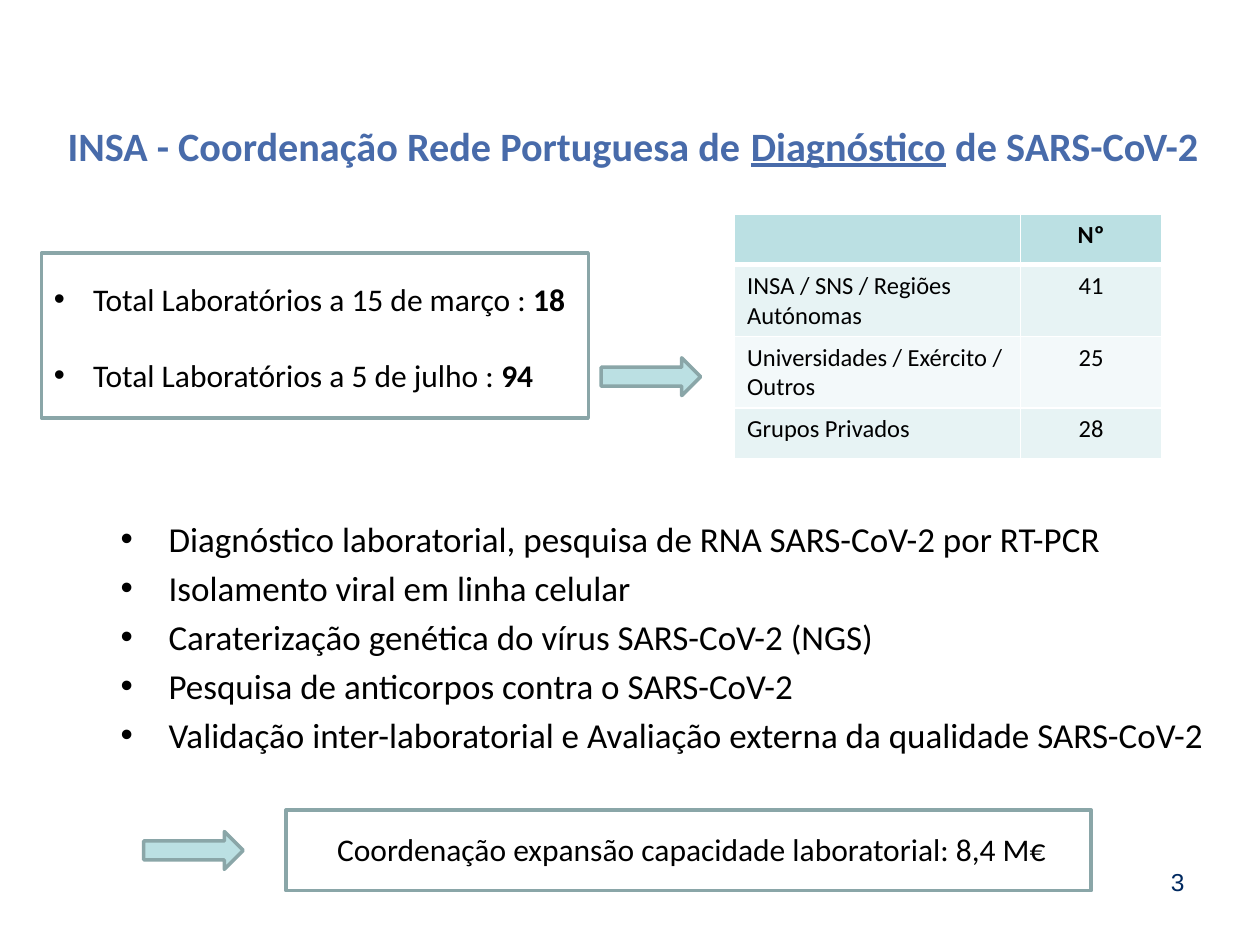
from dataclasses import dataclass

from lxml import etree
from pptx import Presentation
from pptx import util as u
from pptx.dml.color import RGBColor
from pptx.enum import shapes, text
from pptx.oxml import ns

BLACK = RGBColor(0, 0, 0)
WHITE = RGBColor(0xFF, 0xFF, 0xFF)
BLUE = RGBColor(0x48, 0x6B, 0xAA)
NAVY = RGBColor(0x00, 0x29, 0x60)
AQUA = RGBColor(0xBB, 0xE0, 0xE3)
GREY = RGBColor(0x8A, 0xA6, 0xA8)
BANDS = (RGBColor(0xE7, 0xF3, 0xF4), RGBColor(0xF3, 0xF9, 0xFA))
LEFT, MID, RIGHT = text.PP_ALIGN.LEFT, text.PP_ALIGN.CENTER, text.PP_ALIGN.RIGHT


@dataclass
class Run:
    words: str
    bold: bool = False
    under: bool = False


@dataclass
class Box:
    left: float
    top: float
    width: float
    height: float

    def rect(self) -> tuple:
        return tuple(map(u.Inches, (self.left, self.top, self.width, self.height)))


@dataclass
class Label:
    box: Box
    lines: list[list[Run]]
    size: float
    color: RGBColor = BLACK
    align: text.PP_ALIGN = LEFT
    font: str = "Calibri"
    indent: float = 0
    gap: float = 0


def style(run, size: float, color: RGBColor, bold: bool, face: str = "Calibri") -> None:
    font = run.font
    font.size, font.name, font.bold = u.Pt(size), face, bold
    font.color.rgb = color


def bullet(para, indent: float) -> None:
    props = para._p.get_or_add_pPr()
    inset = u.Inches(indent)
    props.set("marL", str(inset))
    props.set("indent", str(-inset))
    font = etree.SubElement(props, ns.qn("a:buFont"))
    font.set("typeface", "Arial")
    mark = etree.SubElement(props, ns.qn("a:buChar"))
    mark.set("char", "•")


def draw_label(slide, label: Label) -> None:
    frame = slide.shapes.add_textbox(*label.box.rect()).text_frame
    frame.word_wrap = True
    for i, line in enumerate(label.lines):
        para = frame.add_paragraph() if i else frame.paragraphs[0]
        if label.indent:
            bullet(para, label.indent)
        para.alignment = label.align
        if i:
            para.space_before = u.Pt(label.gap)
        for part in line:
            run = para.add_run()
            run.text = part.words
            style(run, label.size, label.color, part.bold, label.font)
            if part.under:
                run.font.underline = True


def draw_shape(slide, kind: shapes.MSO_SHAPE, box: Box, fill: RGBColor | None = None) -> None:
    shape = slide.shapes.add_shape(kind, *box.rect())
    shape.shadow.inherit = False
    if fill is None:
        shape.fill.background()
    else:
        shape.fill.solid()
        shape.fill.fore_color.rgb = fill
    shape.line.color.rgb = GREY
    shape.line.width = u.Pt(2)


def edge(cell, side: str, width: float) -> None:
    line = etree.SubElement(cell._tc.get_or_add_tcPr(), ns.qn(f"a:ln{side}"))
    line.set("w", str(u.Pt(width)))
    fill = etree.SubElement(line, ns.qn("a:solidFill"))
    etree.SubElement(fill, ns.qn("a:srgbClr")).set("val", str(WHITE))


def draw_table(slide, box: Box, rows: list[tuple], widths: tuple, heights: tuple) -> None:
    table = slide.shapes.add_table(len(rows), len(widths), *box.rect()).table
    for col, width in zip(table.columns, widths):
        col.width = u.Inches(width)
    for r, (row, height) in enumerate(zip(rows, heights)):
        table.rows[r].height = u.Inches(height)
        for c, words in enumerate(row):
            cell = table.cell(r, c)
            for side in "LRTB":
                thick = (r, side) in ((0, "B"), (1, "T"))
                edge(cell, side, 3 if thick else 1)
            cell.fill.solid()
            cell.fill.fore_color.rgb = BANDS[(r - 1) % 2] if r else AQUA
            para = cell.text_frame.paragraphs[0]
            para.text = words
            para.alignment = MID if c else LEFT
            for run in para.runs:
                style(run, 14, BLACK, r == 0)


TASKS = (
    "Diagnóstico laboratorial, pesquisa de RNA SARS-CoV-2 por RT-PCR",
    "Isolamento viral em linha celular",
    "Caraterização genética do vírus SARS-CoV-2 (NGS)",
    "Pesquisa de anticorpos contra o SARS-CoV-2",
    "Validação inter-laboratorial e Avaliação externa da qualidade SARS-CoV-2",
)
LABELS = (
    Label(Box(7.17, 6.83, 2.33, 0.52), [[Run("3")]], 14, NAVY, RIGHT, "Arial"),
    Label(Box(0.33, 2.17, 4.71, 1.28), [
        [Run("Total Laboratórios a 15 de março : "), Run("18", True)],
        [Run("Total Laboratórios a 5 de julho :"), Run(" 94", True)],
    ], 18, indent=0.31, gap=22),
    Label(Box(0.33, 0.91, 9.39, 0.49), [[
        Run("INSA - Coordenação Rede Portuguesa de ", True),
        Run("Diagnóstico", True, True),
        Run(" de SARS-CoV-2", True),
    ]], 23, BLUE, MID),
    Label(Box(0.86, 4.06, 8.87, 3.2), [[Run(task)] for task in TASKS], 20,
          indent=0.38, gap=4),
    Label(Box(2.32, 6.54, 6.34, 0.67),
          [[Run("Coordenação expansão capacidade laboratorial: 8,4 M€")]], 18, align=MID),
)
FRAMES = (Box(0.33, 2.01, 4.34, 1.31), Box(2.27, 6.43, 6.39, 0.64))
ARROWS = (Box(4.77, 2.84, 0.79, 0.3), Box(1.14, 6.6, 0.79, 0.3))
ROWS = [
    ("", "Nº"),
    ("INSA / SNS / Regiões Autónomas", "41"),
    ("Universidades / Exército / Outros", "25"),
    ("Grupos Privados", "28"),
]


def main() -> None:
    deck = Presentation()
    deck.slide_width, deck.slide_height = u.Inches(10), u.Inches(7.5)
    slide = deck.slides.add_slide(deck.slide_layouts[6])
    for box in FRAMES:
        draw_shape(slide, shapes.MSO_SHAPE.RECTANGLE, box)
    for box in ARROWS:
        draw_shape(slide, shapes.MSO_SHAPE.RIGHT_ARROW, box, AQUA)
    for label in LABELS:
        draw_label(slide, label)
    draw_table(slide, Box(5.83, 1.7, 3.39, 1.94), ROWS, (2.27, 1.12), (0.4, 0.57, 0.57, 0.4))
    deck.save("out.pptx")


if __name__ == "__main__":
    main()
